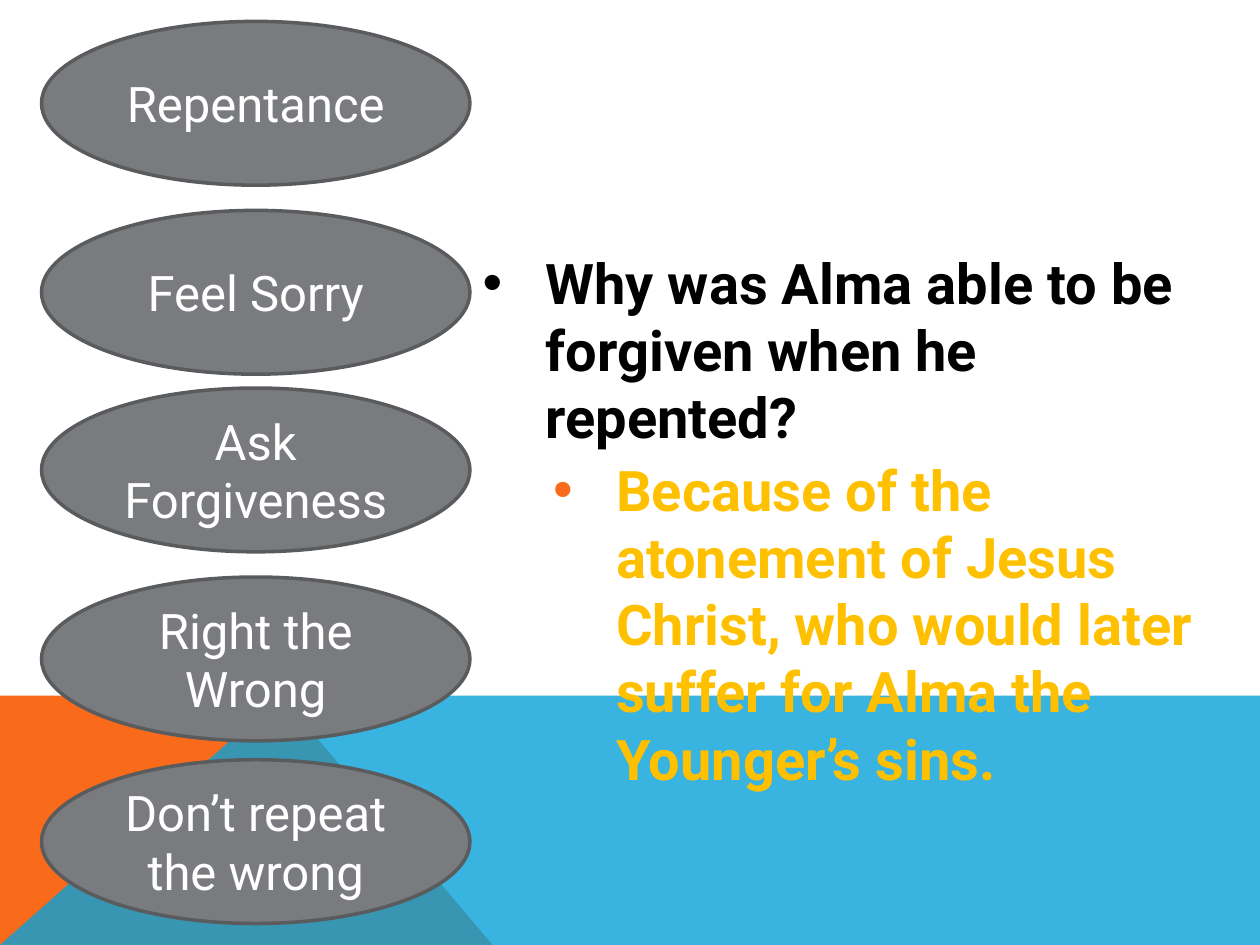
from lxml import etree
from pptx import Presentation
from pptx.dml.color import RGBColor
from pptx.enum.shapes import MSO_SHAPE
from pptx.enum.text import MSO_ANCHOR, MSO_AUTO_SIZE, PP_ALIGN
from pptx.oxml.ns import qn
from pptx.util import Inches, Pt

OVAL = MSO_SHAPE.OVAL
MIDDLE, TOP = MSO_ANCHOR.MIDDLE, MSO_ANCHOR.TOP
CENTER, LEFT = PP_ALIGN.CENTER, PP_ALIGN.LEFT
NO_AUTOFIT = MSO_AUTO_SIZE.NONE

ORANGE = RGBColor(0xF9, 0x6A, 0x1B)
BLUE = RGBColor(0x08, 0xA1, 0xD9)
GRAY = RGBColor(0x79, 0x7B, 0x7E)
DARK_GRAY = RGBColor(0x5A, 0x5B, 0x5D)
GOLD = RGBColor(0xFF, 0xC0, 0x00)
BLACK = RGBColor(0, 0, 0)
WHITE = RGBColor(0xFF, 0xFF, 0xFF)
FONT = "Roboto"

STEPS = [
    (0.17, "Repentance"),
    (1.67, "Feel Sorry"),
    (3.08, "Ask Forgiveness"),
    (4.58, "Right the Wrong"),
    (6.03, "Don’t repeat the wrong"),
]
QUESTION = "Why was Alma able to be forgiven when he repented?"
ANSWER = ("Because of the atonement of Jesus Christ, "
          "who would later suffer for Alma the Younger’s sins.")


def style_runs(para, size, color, bold=False):
    for span in para.runs:
        span.font.name = FONT
        span.font.size = Pt(size)
        span.font.bold = bold
        span.font.color.rgb = color


def add_band(page, points, color, opacity=100):
    """Draw a flat polygon from points in inches."""
    corners = [(Inches(x), Inches(y)) for x, y in points]
    builder = page.shapes.build_freeform(*corners[0])
    builder.add_line_segments(corners[1:], close=True)
    band = builder.convert_to_shape()
    band.shadow.inherit = False
    band.fill.solid()
    band.fill.fore_color.rgb = color
    band.line.fill.background()
    if opacity < 100:
        fill_color = band.fill._xPr.find(".//" + qn("a:srgbClr"))
        etree.SubElement(fill_color, qn("a:alpha"), val=str(opacity * 1000))


def add_step(page, top, text):
    oval = page.shapes.add_shape(
        OVAL, Inches(0.33), Inches(top), Inches(3.4), Inches(1.3))
    oval.shadow.inherit = False
    oval.fill.solid()
    oval.fill.fore_color.rgb = GRAY
    oval.line.color.rgb = DARK_GRAY
    oval.line.width = Pt(2)
    frame = oval.text_frame
    frame.word_wrap = True
    frame.vertical_anchor = MIDDLE
    frame.text = text
    para = frame.paragraphs[0]
    para.alignment = CENTER
    style_runs(para, 28, WHITE)


def format_bullet(para, indent, text_color, bullet_color, space_before=0):
    props = para._p.get_or_add_pPr()
    props.set("marL", str(Inches(indent)))
    props.set("indent", str(Inches(-0.5)))
    color = etree.SubElement(props, qn("a:buClr"))
    etree.SubElement(color, qn("a:srgbClr"), val=str(bullet_color))
    etree.SubElement(props, qn("a:buFont"), typeface="Arial")
    etree.SubElement(props, qn("a:buChar"), char="•")
    para.space_before = Pt(space_before)
    para.alignment = LEFT
    style_runs(para, 32, text_color, bold=True)


def fill_body(body):
    body.left, body.top = Inches(3.73), Inches(1.92)
    body.width, body.height = Inches(6.18), Inches(5.42)
    frame = body.text_frame
    frame.word_wrap = True
    frame.auto_size = NO_AUTOFIT
    frame.vertical_anchor = TOP
    frame.text = QUESTION
    format_bullet(frame.paragraphs[0], 0.5, BLACK, BLACK)
    answer = frame.add_paragraph()
    answer.text = ANSWER
    answer.level = 4
    format_bullet(answer, 1.06, GOLD, ORANGE, space_before=3)


def main():
    deck = Presentation()
    deck.slide_width, deck.slide_height = Inches(10), Inches(7.5)
    page = deck.slides.add_slide(deck.slide_layouts[1])
    title, body = page.placeholders
    title.element.getparent().remove(title.element)

    # Coloured bands along the bottom
    add_band(page, [(0, 7.5), (0, 5.52), (2.23, 5.52), (3.91, 7.5)], ORANGE)
    add_band(page, [(0, 7.5), (2.23, 5.52), (10, 5.52), (10, 7.5)], BLUE, 80)

    # Steps of repentance
    for top, text in STEPS:
        add_step(page, top, text)

    # Question and answer, in front of the bands
    fill_body(body)
    page.shapes._spTree.append(body.element)

    deck.save("out.pptx")


if __name__ == "__main__":
    main()
